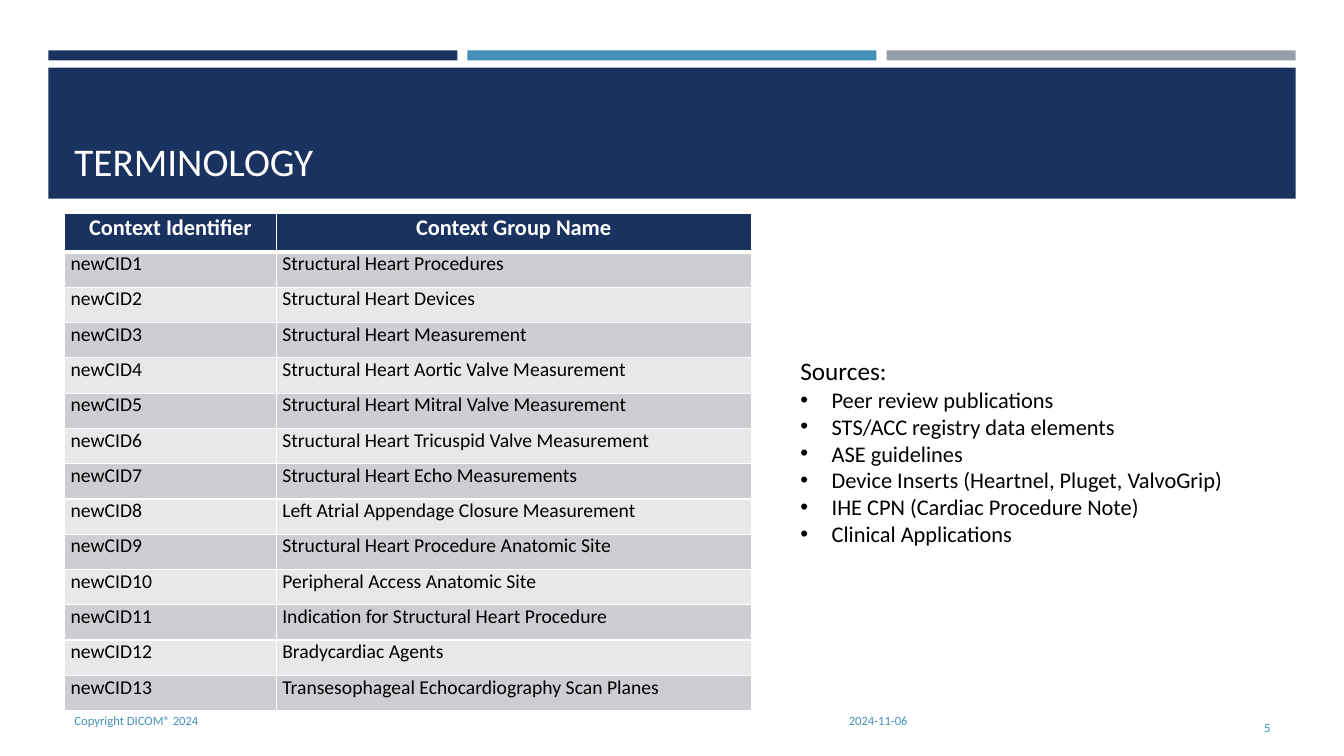
import dataclasses

import pptx
import pptx.dml.color
import pptx.enum.shapes
import pptx.enum.text
import pptx.oxml.ns
import pptx.util
from lxml import etree

Inches = pptx.util.Inches
Pt = pptx.util.Pt
ALIGN = pptx.enum.text.PP_ALIGN
ANCHOR = pptx.enum.text.MSO_ANCHOR


@dataclasses.dataclass(frozen=True)
class Theme:
    font: str = "Calibri"
    navy: str = "1A3260"
    blue: str = "4590B8"
    grey: str = "969FA7"
    white: str = "FFFFFF"
    black: str = "000000"
    bands: tuple = ("CDCED2", "E8E8EA")
    title_size: int = 28
    lead_size: int = 18
    list_size: int = 16
    head_size: int = 16
    cell_size: int = 14
    footer_size: int = 9


THEME = Theme()

CONTEXT_GROUPS = [
    "Structural Heart Procedures",
    "Structural Heart Devices",
    "Structural Heart Measurement",
    "Structural Heart Aortic Valve Measurement",
    "Structural Heart Mitral Valve Measurement",
    "Structural Heart Tricuspid Valve Measurement",
    "Structural Heart Echo Measurements",
    "Left Atrial Appendage Closure Measurement",
    "Structural Heart Procedure Anatomic Site",
    "Peripheral Access Anatomic Site",
    "Indication for Structural Heart Procedure",
    "Bradycardiac Agents",
    "Transesophageal Echocardiography Scan Planes",
]

SOURCES = [
    "Peer review publications",
    "STS/ACC registry data elements",
    "ASE guidelines",
    "Device Inserts (Heartnel, Pluget, ValvoGrip)",
    "IHE CPN (Cardiac Procedure Note)",
    "Clinical Applications",
]


def rgb(color):
    return pptx.dml.color.RGBColor.from_string(color)


def add_bar(slide, left, top, width, height, color):
    bar = slide.shapes.add_shape(
        pptx.enum.shapes.MSO_SHAPE.RECTANGLE,
        Inches(left), Inches(top), Inches(width), Inches(height))
    bar.shadow.inherit = False
    bar.fill.solid()
    bar.fill.fore_color.rgb = rgb(color)
    bar.line.fill.background()


def style_paragraph(paragraph, size, color, bold=False, align=ALIGN.LEFT):
    paragraph.alignment = align
    for run in paragraph.runs:
        run.font.name = THEME.font
        run.font.size = Pt(size)
        run.font.bold = bold
        run.font.color.rgb = rgb(color)


def add_text(slide, box, text, size, color, align=ALIGN.LEFT, anchor=ANCHOR.TOP):
    frame = slide.shapes.add_textbox(*map(Inches, box)).text_frame
    frame.word_wrap = True
    frame.vertical_anchor = anchor
    frame.text = text
    style_paragraph(frame.paragraphs[0], size, color, align=align)
    return frame


def add_bullet(paragraph, indent):
    properties = paragraph._p.get_or_add_pPr()
    properties.set("marL", str(Inches(indent)))
    properties.set("indent", str(-Inches(indent)))
    font = etree.SubElement(properties, pptx.oxml.ns.qn("a:buFont"))
    font.set("typeface", "Arial")
    mark = etree.SubElement(properties, pptx.oxml.ns.qn("a:buChar"))
    mark.set("char", "•")


def set_borders(cell, top, bottom):
    """Draw white cell edges; top and bottom widths are in points."""
    properties = cell._tc.get_or_add_tcPr()
    for edge, width in (("lnL", 1), ("lnR", 1), ("lnT", top), ("lnB", bottom)):
        line = etree.SubElement(properties, pptx.oxml.ns.qn(f"a:{edge}"))
        line.set("w", str(Pt(width)))
        fill = etree.SubElement(line, pptx.oxml.ns.qn("a:solidFill"))
        color = etree.SubElement(fill, pptx.oxml.ns.qn("a:srgbClr"))
        color.set("val", THEME.white)


def draw_header(slide, left, top, width):
    gap = 0.1
    bar_width = (width - 2 * gap) / 3
    for index, color in enumerate((THEME.navy, THEME.blue, THEME.grey)):
        add_bar(slide, left + index * (bar_width + gap), top, bar_width, 0.1, color)
    add_bar(slide, left, top + 0.17, width, 1.3, THEME.navy)
    add_text(slide, (left + 0.16, top + 0.27, width - 0.31, 1.11), "TERMINOLOGY",
             THEME.title_size, THEME.white, anchor=ANCHOR.BOTTOM)


def fill_cell(cell, text, row):
    is_head = row == 0
    set_borders(cell, top=3 if row == 1 else 1, bottom=3 if is_head else 1)
    cell.fill.solid()
    cell.fill.fore_color.rgb = rgb(
        THEME.navy if is_head else THEME.bands[(row - 1) % 2])
    cell.margin_left = cell.margin_right = Inches(0.06)
    cell.margin_top = cell.margin_bottom = 0
    cell.text = text
    paragraph = cell.text_frame.paragraphs[0]
    paragraph.space_before = paragraph.space_after = Pt(2)
    if is_head:
        style_paragraph(paragraph, THEME.head_size, THEME.white, True, ALIGN.CENTER)
    else:
        style_paragraph(paragraph, THEME.cell_size, THEME.black)


def draw_context_table(slide, left, top, width, height):
    rows = [("Context Identifier", "Context Group Name")]
    rows += [(f"newCID{number}", name)
             for number, name in enumerate(CONTEXT_GROUPS, 1)]
    table = slide.shapes.add_table(
        len(rows), 2, Inches(left), Inches(top), Inches(width), Inches(height)).table
    identifier_width, head_height = 2.1, 0.38
    table.columns[0].width = Inches(identifier_width)
    table.columns[1].width = Inches(width - identifier_width)
    row_height = (height - head_height) / len(CONTEXT_GROUPS)
    for row, texts in enumerate(rows):
        table.rows[row].height = Inches(row_height if row else head_height)
        for column, text in enumerate(texts):
            fill_cell(table.cell(row, column), text, row)


def draw_sources(slide, left, top, width, height):
    frame = add_text(slide, (left, top, width, height), "Sources:",
                     THEME.lead_size, THEME.black)
    for source in SOURCES:
        paragraph = frame.add_paragraph()
        paragraph.text = source
        add_bullet(paragraph, 0.31)
        style_paragraph(paragraph, THEME.list_size, THEME.black)


def draw_footer(slide, left, top, height):
    style = (THEME.footer_size, THEME.blue)
    add_text(slide, (left, top, 7.56, height), "Copyright DICOM® 2024", *style)
    add_text(slide, (left + 7.68, top, 3.11, height), "2024-11-06", *style)
    add_text(slide, (left + 10.91, top, 1.15, height), "5", *style,
             align=ALIGN.RIGHT, anchor=ANCHOR.MIDDLE)


def main():
    deck = pptx.Presentation()
    deck.slide_width, deck.slide_height = Inches(13.33), Inches(7.5)
    slide = deck.slides.add_slide(deck.slide_layouts[6])
    draw_header(slide, 0.48, 0.5, 12.37)
    draw_context_table(slide, 0.64, 2.12, 6.81, 4.93)
    draw_sources(slide, 7.84, 3.48, 4.69, 2.02)
    draw_footer(slide, 0.64, 7.02, 0.4)
    deck.save("out.pptx")


if __name__ == "__main__":
    main()
